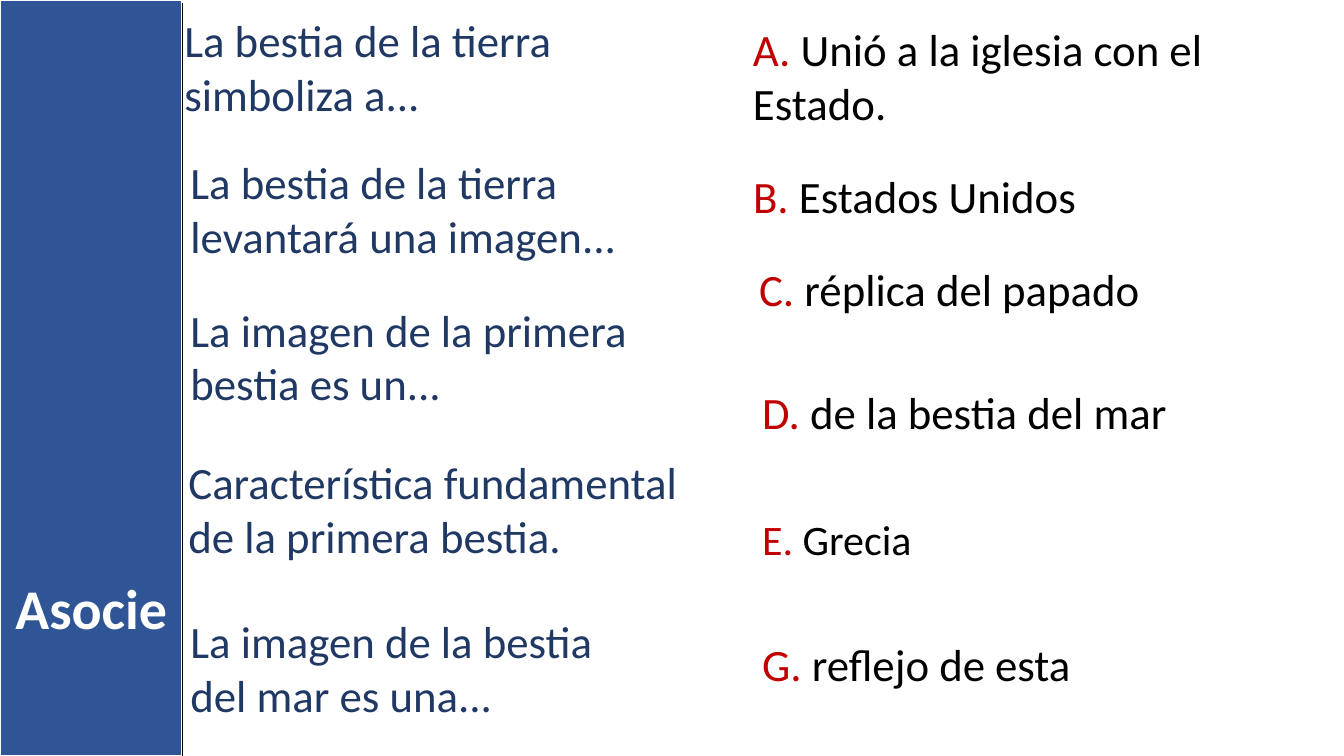
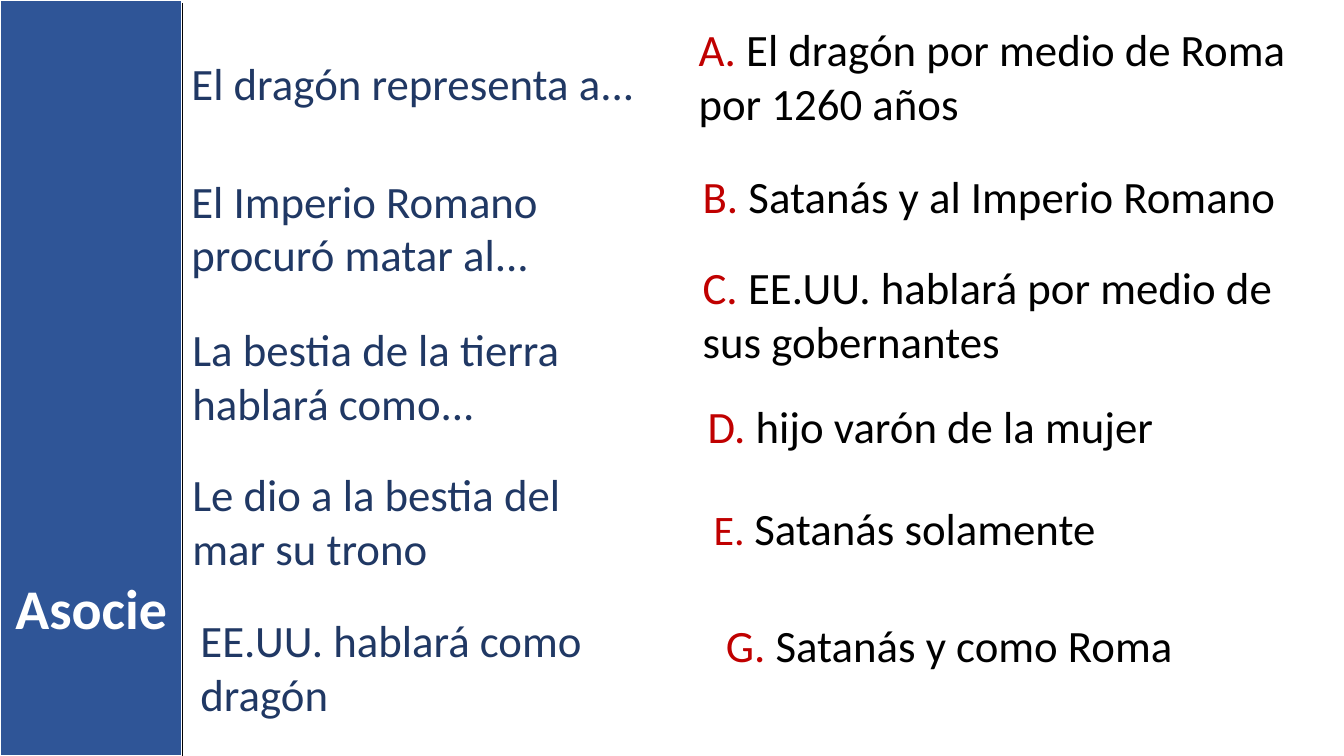
"""Build two matching-exercise slides with a shared side band."""
from dataclasses import dataclass

from lxml import etree
from pptx import Presentation
from pptx.dml.color import RGBColor
from pptx.enum.shapes import MSO_CONNECTOR, MSO_SHAPE
from pptx.enum.text import MSO_AUTO_SIZE, PP_ALIGN
from pptx.oxml.ns import qn
from pptx.util import Inches, Pt

RECTANGLE = MSO_SHAPE.RECTANGLE
STRAIGHT = MSO_CONNECTOR.STRAIGHT
FIT_TEXT = MSO_AUTO_SIZE.SHAPE_TO_FIT_TEXT
CENTER = PP_ALIGN.CENTER


@dataclass(frozen=True)
class Theme:
    """Colours, font and type sizes shared by the slides."""

    font: str = "Calibri"
    band: RGBColor = RGBColor(0x2F, 0x55, 0x97)
    question: RGBColor = RGBColor(0x20, 0x38, 0x64)
    letter: RGBColor = RGBColor(0xC0, 0x00, 0x00)
    black: RGBColor = RGBColor(0x00, 0x00, 0x00)
    white: RGBColor = RGBColor(0xFF, 0xFF, 0xFF)
    body: int = 32
    small: int = 30
    title: int = 40


THEME = Theme()
SLIDE_WIDTH, SLIDE_HEIGHT = 13.33, 7.5
BAND_WIDTH = 1.81
EDGE_TOP = 0.03
TITLE = "Asocie"
TITLE_TOP, TITLE_HEIGHT = 5.64, 0.77
LINE_HEIGHT, BOX_PADDING = 0.54, 0.1

# Questions: text, left, top, width, lines.
# Answers: letter, text, left, top, width, lines, letter size, text size.
BODY, SMALL = THEME.body, THEME.small
EXERCISES = [
    {
        "questions": [
            ("La bestia de la tierra simboliza a...", 1.73, 0.08, 5, 2),
            ("La bestia de la tierra levantará una imagen...", 1.79, 1.49, 4.59, 2),
            ("La imagen de la primera bestia es un...", 1.79, 2.95, 5.1, 2),
            ("Característica fundamental de la primera bestia.", 1.77, 4.46, 5.15, 2),
            ("La imagen de la bestia del mar es una...", 1.79, 6.04, 4.77, 2),
        ],
        "answers": [
            ("A. ", "Unió a la iglesia con el Estado.", 7.37, 0.17, 5.04, 2, BODY, BODY),
            ("B. ", "Estados Unidos", 7.37, 1.62, 5.29, 1, BODY, BODY),
            ("C. ", "réplica del papado", 7.43, 2.55, 5.3, 1, BODY, BODY),
            ("D. ", "de la bestia del mar", 7.46, 3.77, 5.53, 1, BODY, BODY),
            ("E. ", "Grecia", 7.46, 5.05, 5.29, 1, SMALL, SMALL),
            ("G. ", "reflejo de esta", 7.46, 6.27, 5.47, 1, BODY, BODY),
        ],
    },
    {
        "questions": [
            ("El dragón representa a...", 1.8, 0.5, 4.62, 1),
            ("El Imperio Romano procuró matar al...", 1.8, 1.67, 4.94, 2),
            ("La bestia de la tierra hablará como...", 1.81, 3.14, 4.85, 2),
            ("Le dio a la bestia del mar su trono", 1.81, 4.58, 4.61, 2),
            ("EE.UU. hablará como dragón", 1.89, 6.03, 4.77, 2),
        ],
        "answers": [
            ("A. ", "El dragón por medio de Roma por 1260 años", 6.83, 0.17, 6.3, 2, BODY, BODY),
            ("B. ", "Satanás y al Imperio Romano", 6.87, 1.62, 6.26, 1, BODY, BODY),
            ("C. ", "EE.UU. hablará por medio de sus gobernantes", 6.87, 2.53, 5.98, 2, BODY, BODY),
            ("D. ", "hijo varón de la mujer", 6.92, 3.91, 6.04, 1, BODY, BODY),
            ("E. ", "Satanás solamente", 6.98, 4.92, 5.75, 1, SMALL, BODY),
            ("G. ", "Satanás y como Roma", 7.1, 6.08, 5.82, 1, BODY, BODY),
        ],
    },
]


def style_font(font, size, color, bold=None):
    """Apply the theme font with a size and colour."""
    font.name = THEME.font
    font.size = Pt(size)
    font.color.rgb = color
    font.bold = bold


def add_paragraph_box(slide, left, top, width, height):
    """Add a wrapping text box and return its paragraph."""
    box = slide.shapes.add_textbox(Inches(left), Inches(top), Inches(width), Inches(height))
    box.text_frame.word_wrap = True
    box.text_frame.auto_size = FIT_TEXT
    return box.text_frame.paragraphs[0]


def box_height(lines, size=THEME.body):
    """Return the height of a box holding some lines of text."""
    return BOX_PADDING + lines * LINE_HEIGHT * size / THEME.body


def add_band(slide):
    """Add the blue band at the left side."""
    band = slide.shapes.add_shape(RECTANGLE, 0, 0, Inches(BAND_WIDTH), Inches(SLIDE_HEIGHT))
    band.shadow.inherit = False
    band.fill.solid()
    band.fill.fore_color.rgb = THEME.band
    band.line.color.rgb = THEME.white
    band.line.width = Pt(1.5)


def add_question(slide, text, left, top, width, lines):
    """Add one question of the left column."""
    paragraph = add_paragraph_box(slide, left, top, width, box_height(lines))
    paragraph.text = text
    style_font(paragraph.font, THEME.body, THEME.question)


def add_answer(slide, letter, text, left, top, width, lines, letter_size, text_size):
    """Add one lettered answer of the right column."""
    height = box_height(lines, max(letter_size, text_size))
    paragraph = add_paragraph_box(slide, left, top, width, height)
    for content, size, color in (
        (letter, letter_size, THEME.letter),
        (text, text_size, THEME.black),
    ):
        run = paragraph.add_run()
        run.text = content
        style_font(run.font, size, color)


def add_title(slide):
    """Add the title on the band."""
    paragraph = add_paragraph_box(slide, 0, TITLE_TOP, BAND_WIDTH, TITLE_HEIGHT)
    paragraph.text = TITLE
    paragraph.alignment = CENTER
    style_font(paragraph.font, THEME.title, THEME.white, bold=True)


def add_band_edge(slide):
    """Add the black line along the band."""
    edge_x = Inches(BAND_WIDTH)
    edge = slide.shapes.add_connector(
        STRAIGHT, edge_x, Inches(EDGE_TOP), edge_x, Inches(SLIDE_HEIGHT)
    )
    edge.line.color.rgb = THEME.black
    edge.line.width = Pt(1)
    etree.SubElement(edge._element.spPr, qn("a:effectLst"))


def main():
    """Build and save the presentation."""
    presentation = Presentation()
    presentation.slide_width = Inches(SLIDE_WIDTH)
    presentation.slide_height = Inches(SLIDE_HEIGHT)
    blank_layout = presentation.slide_layouts[6]
    for exercise in EXERCISES:
        slide = presentation.slides.add_slide(blank_layout)
        add_band(slide)
        for question in exercise["questions"]:
            add_question(slide, *question)
        for answer in exercise["answers"]:
            add_answer(slide, *answer)
        add_title(slide)
        add_band_edge(slide)
    presentation.save("out.pptx")


if __name__ == "__main__":
    main()
